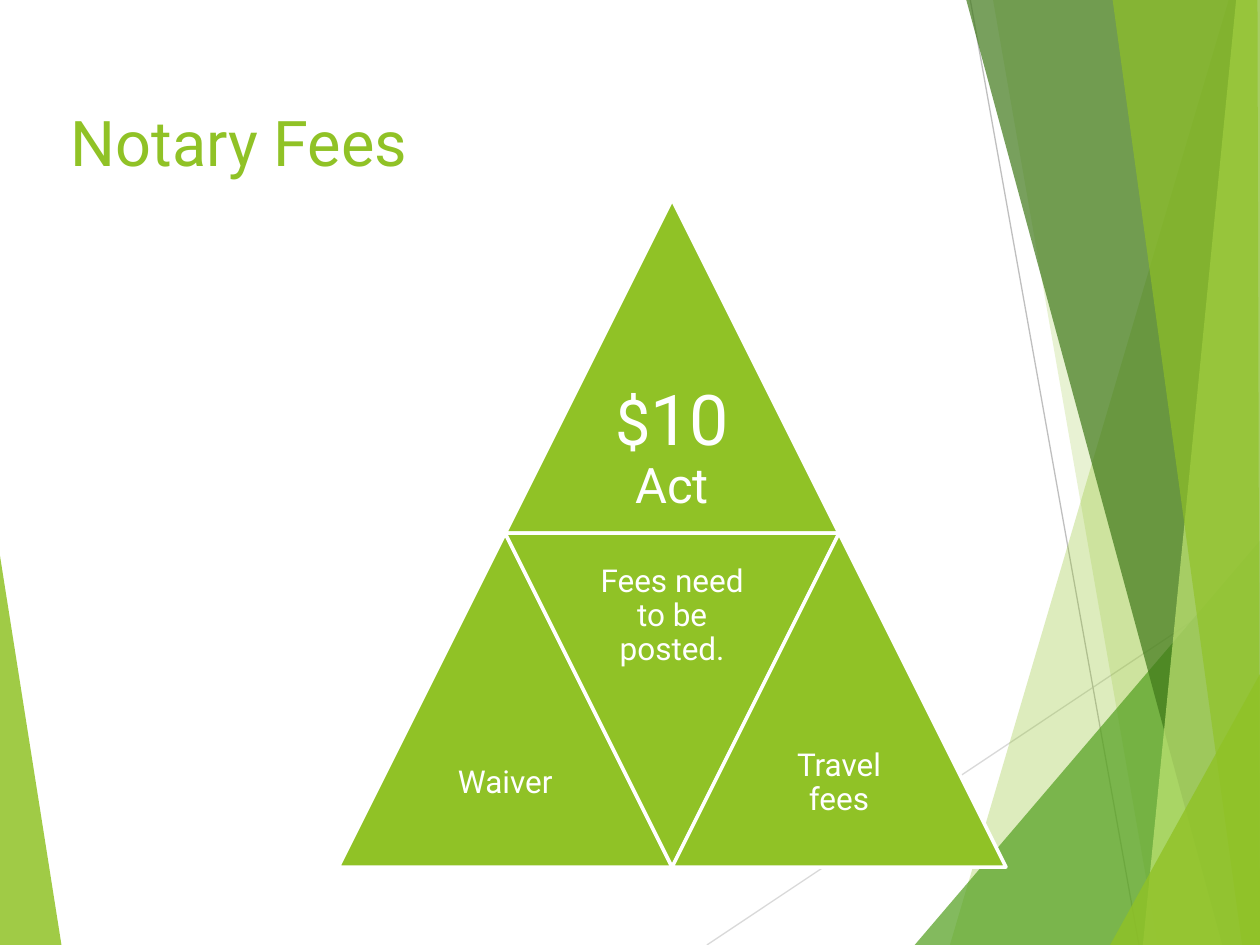
from lxml.etree import SubElement
from pptx import Presentation
from pptx.dml.color import RGBColor
from pptx.enum.shapes import MSO_CONNECTOR, MSO_SHAPE
from pptx.enum.text import MSO_ANCHOR, MSO_AUTO_SIZE, PP_ALIGN
from pptx.oxml.ns import qn
from pptx.util import Cm, Pt

COLORS = {
    "lime": "90C226",
    "green": "54A021",
    "forest": "3F7819",
    "pale": "C0E474",
    "white": "FFFFFF",
    "silver": "D9D9D9",
    "gray": "BFBFBF",
}
FONT = "Roboto"
WIDTH, HEIGHT = 25.4, 19.05

LEFT_FACET = ("lime", 85, [(0, 11.2), (1.24, HEIGHT), (0, HEIGHT)])
RAYS = [
    ("silver", (14.25, HEIGHT), (WIDTH, 11.61)),
    ("gray", (19.56, 0), (22.96, HEIGHT)),
]
RIGHT_FACETS = [
    ("lime", 30, [(24.77, 0), (19.15, HEIGHT), (WIDTH, HEIGHT), (WIDTH, 0)]),
    ("lime", 20, [(20.02, 0), (23.34, HEIGHT), (WIDTH, HEIGHT), (WIDTH, 0)]),
    ("green", 72, [(18.44, HEIGHT), (WIDTH, 10.9), (WIDTH, HEIGHT)]),
    ("forest", 70, [(19.48, 0), (24.64, HEIGHT), (WIDTH, HEIGHT), (WIDTH, 0)]),
    ("pale", 70, [(24.92, 0), (23.04, HEIGHT), (WIDTH, HEIGHT), (WIDTH, 0)]),
    ("lime", 65, [(22.43, 0), (25.04, HEIGHT), (WIDTH, HEIGHT), (25.35, 0)]),
    ("lime", 80, [(22.38, HEIGHT), (WIDTH, 13.59), (WIDTH, HEIGHT)]),
]

TITLE = "Notary Fees"
PYRAMID_LEFT, PYRAMID_TOP, SIDE = 6.82, 4.02, 6.73
UP, DOWN = MSO_SHAPE.ISOSCELES_TRIANGLE, MSO_SHAPE.FLOWCHART_MERGE
TRIANGLES = [
    (UP, 1, 0, 0.38, [("$", 36), ("10", 40), (" Act", 28)]),
    (UP, 0, 1, 0.18, [("Waiver", 18)]),
    (DOWN, 1, 1, 0.18, [("Fees need to be posted.", 18)]),
    (UP, 2, 1, 0.38, [("Travel fees", 18)]),
]


def apply(target, values):
    for name, value in values.items():
        setattr(target, name, value)


def rgb(name):
    return RGBColor.from_string(COLORS[name])


def paint(shape, color):
    shape.shadow.inherit = False
    shape.fill.solid()
    shape.fill.fore_color.rgb = rgb(color)


def add_facet(slide, color, opacity, points):
    corners = [(Cm(x), Cm(y)) for x, y in points]
    builder = slide.shapes.build_freeform(*corners[0])
    builder.add_line_segments(corners[1:], close=True)
    shape = builder.convert_to_shape()
    paint(shape, color)
    shape.line.fill.background()
    color_element = shape.element.spPr.find(".//" + qn("a:srgbClr"))
    SubElement(color_element, qn("a:alpha")).set("val", str(opacity * 1000))


def add_ray(slide, color, start, end):
    lengths = [Cm(value) for value in start + end]
    ray = slide.shapes.add_connector(MSO_CONNECTOR.STRAIGHT, *lengths)
    ray.line.color.rgb = rgb(color)
    ray.line.width = Pt(0.75)
    SubElement(ray.element.spPr, qn("a:effectLst"))


def add_text(paragraph, text, size, color):
    run = paragraph.add_run()
    run.text = text
    apply(run.font, {"name": FONT, "size": Pt(size)})
    run.font.color.rgb = rgb(color)


def add_title(slide):
    title = slide.shapes.title
    apply(title, {"left": Cm(0), "top": Cm(1.96), "width": Cm(22.86), "height": Cm(3.18)})
    apply(title.text_frame, {
        "margin_left": Cm(1.43),
        "vertical_anchor": MSO_ANCHOR.TOP,
        "auto_size": MSO_AUTO_SIZE.NONE,
    })
    paragraph = title.text_frame.paragraphs[0]
    paragraph.alignment = PP_ALIGN.LEFT
    add_text(paragraph, TITLE, 36, "lime")


def add_triangle(slide, kind, half_steps, row, inset, runs):
    left = PYRAMID_LEFT + half_steps * SIDE / 2
    top = PYRAMID_TOP + row * SIDE
    shape = slide.shapes.add_shape(kind, Cm(left), Cm(top), Cm(SIDE), Cm(SIDE))
    paint(shape, "lime")
    shape.line.color.rgb = rgb("white")
    shape.line.width = Pt(2)
    margins = {f"margin_{edge}": Cm(inset) for edge in ("left", "top", "right", "bottom")}
    apply(shape.text_frame, {
        **margins,
        "word_wrap": True,
        "vertical_anchor": MSO_ANCHOR.MIDDLE,
    })
    paragraph = shape.text_frame.paragraphs[0]
    apply(paragraph, {"alignment": PP_ALIGN.CENTER, "line_spacing": 0.9})
    for text, size in runs:
        add_text(paragraph, text, size, "white")


def main():
    """Build the notary fees slide and save it."""
    presentation = Presentation()
    apply(presentation, {"slide_width": Cm(WIDTH), "slide_height": Cm(HEIGHT)})
    slide = presentation.slides.add_slide(presentation.slide_layouts[5])
    add_title(slide)
    add_facet(slide, *LEFT_FACET)
    for ray in RAYS:
        add_ray(slide, *ray)
    for facet in RIGHT_FACETS:
        add_facet(slide, *facet)
    for triangle in TRIANGLES:
        add_triangle(slide, *triangle)
    presentation.save("out.pptx")


if __name__ == "__main__":
    main()
